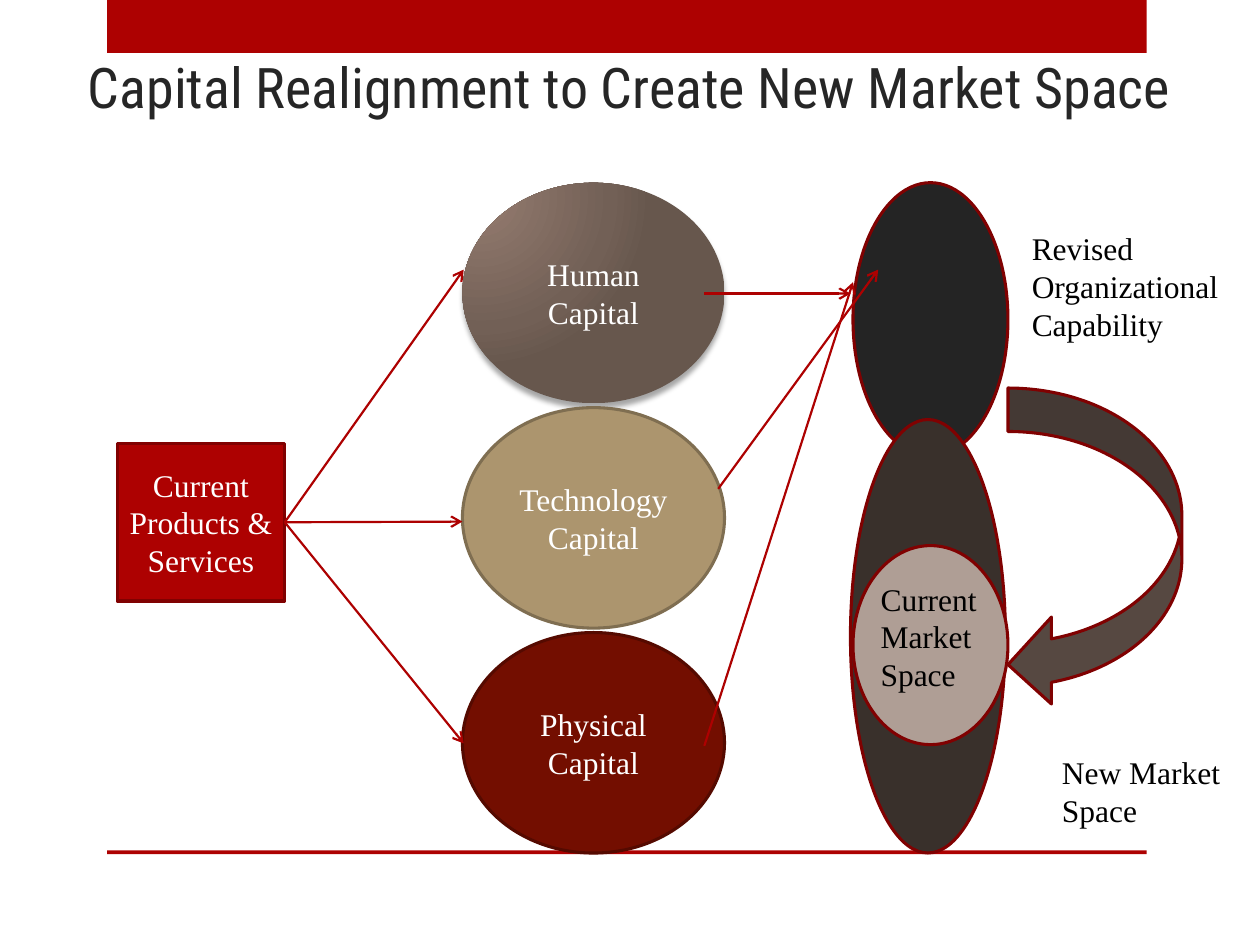
from dataclasses import dataclass

from lxml import etree
from pptx import Presentation
from pptx.dml.color import RGBColor
from pptx.enum import shapes, text
from pptx.oxml import parse_xml
from pptx.oxml.ns import nsdecls, qn
from pptx.util import Inches, Pt


@dataclass(frozen=True)
class Theme:
    red: str = "AD0101"
    outline: str = "800101"
    ink: str = "000000"
    title: str = "262626"
    white: str = "FFFFFF"
    tan: str = "AC956E"
    tan_line: str = "7F6E51"
    maroon: str = "730E00"
    maroon_line: str = "550A00"
    charcoal: str = "242424"
    umber: str = "39302B"
    taupe: str = "AF9E95"
    arrow: str = "564841"
    gradient: tuple = ((0, "947B6F"), (76, "726056"), (100, "67574D"))
    heading_font: str = "Roboto Condensed"
    body_font: str = "Times New Roman"
    heading_size: int = 32
    body_size: int = 18
    border: float = 1.75
    link: float = 1.25


T = Theme()
KIND = shapes.MSO_SHAPE
ALIGN = text.PP_ALIGN
ANCHOR = text.MSO_ANCHOR


def write(sp, lines, color=T.ink, size=T.body_size, font=T.body_font,
          align=ALIGN.LEFT, anchor=ANCHOR.TOP, wrap=True):
    tf = sp.text_frame
    tf.word_wrap = wrap
    tf.vertical_anchor = anchor
    for i, line in enumerate(lines.split("\n")):
        p = tf.paragraphs[0] if i == 0 else tf.add_paragraph()
        p.alignment = align
        r = p.add_run()
        r.text = line
        r.font.size = Pt(size)
        r.font.name = font
        r.font.color.rgb = RGBColor.from_string(color)


def add_label(s, box, lines, **fmt):
    sp = s.shapes.add_textbox(*map(Inches, box))
    write(sp, lines, **fmt)


def add_block(s, kind, box, fill, line=None, label=None):
    sp = s.shapes.add_shape(kind, *map(Inches, box))
    sp.shadow.inherit = False
    sp.fill.solid()
    sp.fill.fore_color.rgb = RGBColor.from_string(fill)
    if line:
        sp.line.color.rgb = RGBColor.from_string(line)
        sp.line.width = Pt(T.border)
    else:
        sp.line.fill.background()
    if label:
        write(sp, label, color=T.white, align=ALIGN.CENTER, anchor=ANCHOR.MIDDLE)
    return sp


def add_glow(sp):
    stops = "".join(
        f'<a:gs pos="{pos * 1000}"><a:srgbClr val="{color}"/></a:gs>'
        for pos, color in T.gradient)
    gradient = parse_xml(
        f'<a:gradFill {nsdecls("a")} rotWithShape="1"><a:gsLst>{stops}</a:gsLst>'
        '<a:path path="circle"><a:fillToRect l="15000" t="15000" r="100000" '
        'b="100000"/></a:path></a:gradFill>')
    shadow = parse_xml(
        f'<a:outerShdw {nsdecls("a")} blurRad="{Pt(3)}" dist="{Pt(3)}" '
        'dir="5400000" rotWithShape="0"><a:srgbClr val="000000">'
        '<a:alpha val="35000"/></a:srgbClr></a:outerShdw>')
    props = sp._element.spPr
    props.replace(props.find(qn("a:solidFill")), gradient)
    props.find(qn("a:effectLst")).append(shadow)


def add_arrow(s, start, end, source=None):
    c = s.shapes.add_connector(shapes.MSO_CONNECTOR.STRAIGHT,
                               *map(Inches, (*start, *end)))
    if source is not None:
        c.begin_connect(source, 3)
    c.line.color.rgb = RGBColor.from_string(T.red)
    c.line.width = Pt(T.link)
    etree.SubElement(c.line._get_or_add_ln(), qn("a:tailEnd"), type="arrow")
    etree.SubElement(c._element.spPr, qn("a:effectLst"))


def add_frame(s, box):
    x, y, w, h = box
    add_block(s, KIND.RECTANGLE, (x, y, w, 0.42), T.red)
    add_block(s, KIND.RECTANGLE, (x, y + h - 0.03, w, 0.03), T.red)
    add_label(s, (0, 0.08, 10, 0.92), "Capital Realignment to Create New Market Space",
              color=T.title, size=T.heading_size, font=T.heading_font,
              align=ALIGN.CENTER, anchor=ANCHOR.BOTTOM)


def add_capitals(s, box):
    x, y, w, h = box
    size = 1.75
    pitch = (h - size) / 2
    capitals = (("Human Capital", T.taupe, None),
                ("Technology Capital", T.tan, T.tan_line),
                ("Physical Capital", T.maroon, T.maroon_line))
    ovals = [add_block(s, KIND.OVAL, (x, y + i * pitch, w, size), fill, line, label)
             for i, (label, fill, line) in enumerate(capitals)]
    add_glow(ovals[0])


def add_market(s, box):
    x, y, w, h = box
    ovals = ((0.02, 0, 2.17, T.charcoal),
             (0, 1.88, h - 1.88, T.umber),
             (0.02, 2.88, 1.58, T.taupe))
    for dx, dy, height, fill in ovals:
        add_block(s, KIND.OVAL, (x + dx, y + dy, w, height), fill, T.outline)
    labels = ((1.34, 0.32, 1.68, 1.01, "Revised\nOrganizational\nCapability"),
              (0.14, 3.1, 0.98, 1.01, "Current\nMarket\nSpace"),
              (1.58, 4.48, 1.47, 0.71, "New Market\nSpace"))
    for dx, dy, width, height, lines in labels:
        add_label(s, (x + dx, y + dy, width, height), lines, wrap=False)


def add_flows(s, services):
    for end in ((3.68, 2.14), (3.67, 4.14), (3.68, 5.9)):
        add_arrow(s, (2.26, 4.14), end, services)
    for start, end in (((5.59, 2.33), (6.75, 2.33)),
                       ((5.7, 3.88), (6.97, 2.14)),
                       ((5.59, 5.92), (6.77, 2.24))):
        add_arrow(s, start, end)


def main():
    prs = Presentation()
    prs.slide_width, prs.slide_height = Inches(10), Inches(7.5)
    s = prs.slides.add_slide(prs.slide_layouts[6])
    add_frame(s, (0.85, 0, 8.25, 6.78))
    add_capitals(s, (3.67, 1.45, 2.08, 5.32))
    services = add_block(s, KIND.RECTANGLE, (0.93, 3.52, 1.33, 1.25), T.red,
                         T.outline, "Current Products & Services")
    add_market(s, (6.75, 1.45, 1.23, 5.32))
    add_flows(s, services)
    add_block(s, KIND.CURVED_LEFT_ARROW, (8, 3.08, 1.38, 2.54), T.arrow, T.outline)
    prs.save("out.pptx")


if __name__ == "__main__":
    main()
